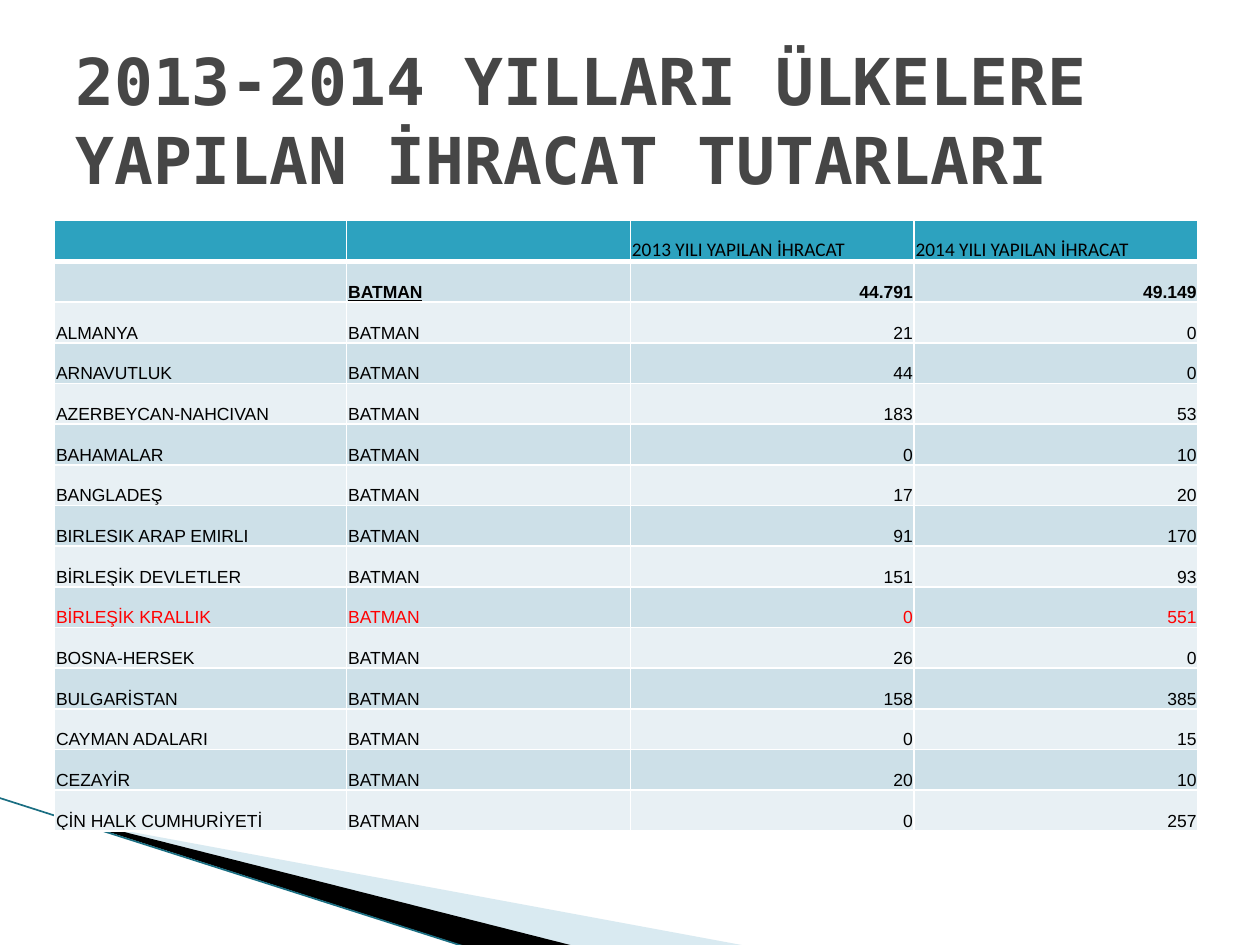
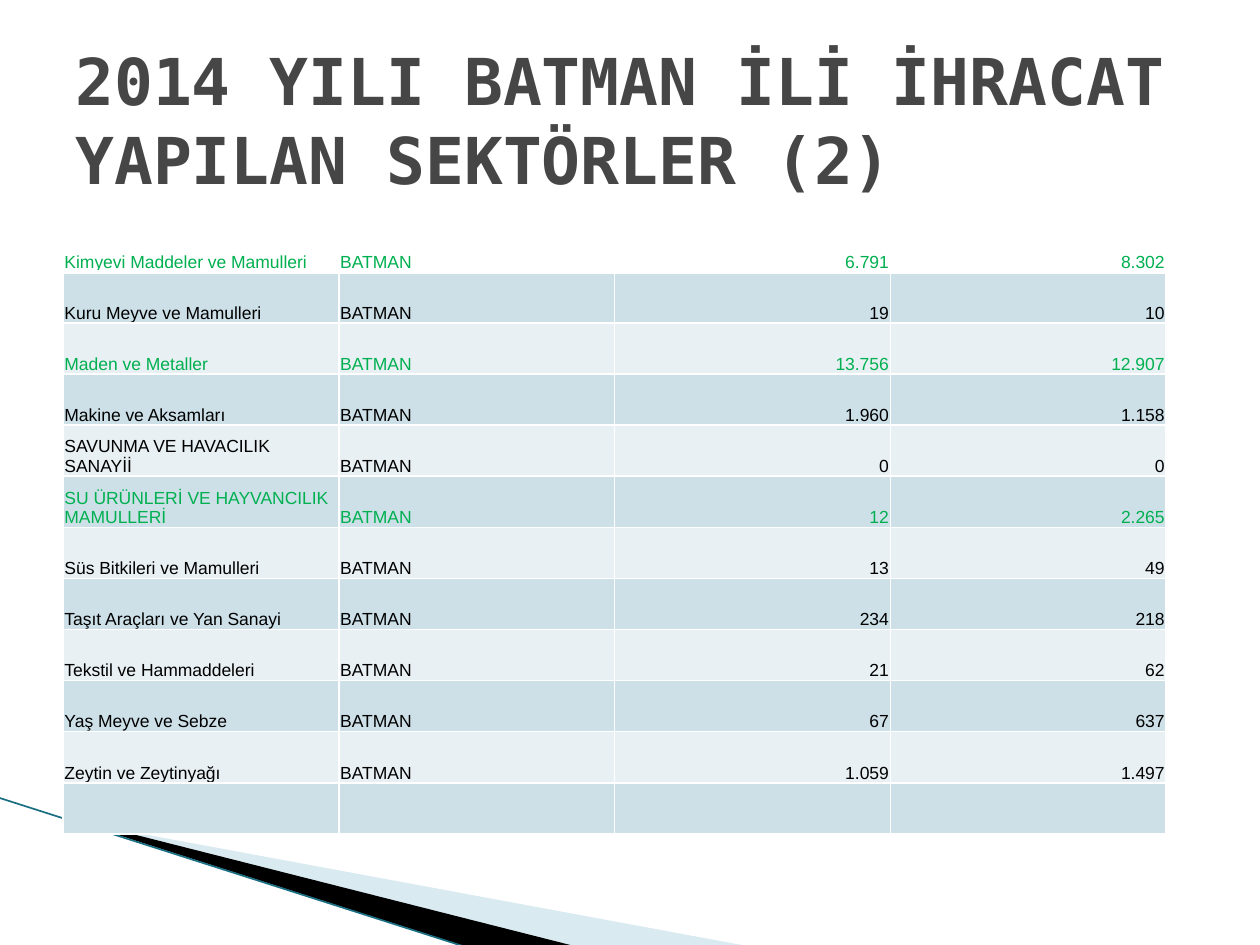
from dataclasses import dataclass

import pptx
import pptx.dml.color
import pptx.enum.shapes
import pptx.enum.text
import pptx.oxml
import pptx.oxml.ns
import pptx.util
from lxml import etree

Cm = pptx.util.Cm
Pt = pptx.util.Pt
RIGHT = pptx.enum.text.PP_ALIGN.RIGHT


@dataclass(frozen=True)
class Theme:
    title: str = "464646"
    text: str = "000000"
    red: str = "FF0000"
    green: str = "00B050"
    header: str = "2DA2BF"
    band_dark: str = "CDE0E8"
    band_light: str = "E8F0F4"
    border: str = "FFFFFF"
    wedge_pale: str = "A0CBDC"
    wedge_dark: str = "000000"
    edge: str = "1A6E82"
    title_font: str = "DejaVu Sans Mono"
    header_font: str = "Calibri"
    body_font: str = "Arial"
    title_size: float = 36.9
    title_pitch: float = 45
    header_size: float = 11
    body_size: float = 10


def rgb(code):
    return pptx.dml.color.RGBColor.from_string(code)


def write(tf, text, *, font, size, color, bold=False, underline=False, align=None, pitch=None):
    p = tf.paragraphs[0]
    p.alignment = align
    if pitch:
        p.line_spacing = Pt(pitch)
    r = p.add_run()
    r.text = text
    r.font.name, r.font.size = font, Pt(size)
    r.font.bold, r.font.underline = bold, underline
    r.font.color.rgb = rgb(color)


def add_borders(cell, color, bottom):
    """Line all four sides at 1 pt, except the bottom, whose width is given."""
    tc_pr = cell._tc.get_or_add_tcPr()
    for side, width in zip("LRTB", (1, 1, 1, bottom)):
        ln = etree.SubElement(tc_pr, pptx.oxml.ns.qn(f"a:ln{side}"), w=str(Pt(width)))
        fill = etree.SubElement(ln, pptx.oxml.ns.qn("a:solidFill"))
        etree.SubElement(fill, pptx.oxml.ns.qn("a:srgbClr"), val=color)


class Deck:
    def __init__(self, theme):
        self.theme = theme
        self.prs = pptx.Presentation()
        self.prs.slide_width, self.prs.slide_height = Cm(25.4), Cm(19.05)
        self.s = None

    def slide(self, title):
        """Start a slide with the corner wedges; return a function that adds the title on top."""
        self.s = self.prs.slides.add_slide(self.prs.slide_layouts[6])
        t = self.theme
        self.wedge([(1.4, 16.54), (15.11, 19.08), (11.58, 19.08), (1.4, 16.51)], t.wedge_pale, 40)
        self.wedge([(1.35, 16.48), (11.61, 19.08), (9.45, 19.1), (1.37, 16.51)], t.wedge_dark)
        self.line((-0.03, 16.08), (9.42, 19.1), t.edge, 0.95)
        self.title(title)

    def wedge(self, points, color, opacity=100):
        start, *rest = [(Cm(x), Cm(y)) for x, y in points]
        builder = self.s.shapes.build_freeform(*start)
        builder.add_line_segments(rest, close=True)
        sp = builder.convert_to_shape()
        sp.shadow.inherit = False
        sp.line.fill.background()
        sp.fill.solid()
        sp.fill.fore_color.rgb = rgb(color)
        if opacity < 100:
            clr = sp._element.spPr.find(".//" + pptx.oxml.ns.qn("a:srgbClr"))
            etree.SubElement(clr, pptx.oxml.ns.qn("a:alpha"), val=str(opacity * 1000))

    def line(self, start, end, color, width):
        straight = pptx.enum.shapes.MSO_CONNECTOR.STRAIGHT
        sp = self.s.shapes.add_connector(straight, *[Cm(v) for v in (*start, *end)])
        sp.line.color.rgb = rgb(color)
        sp.line.width = Pt(width)
        etree.SubElement(sp._element.spPr, pptx.oxml.ns.qn("a:effectLst"))

    def title(self, text):
        t = self.theme
        tf = self.s.shapes.add_textbox(Cm(1.27), Cm(0.8), Cm(22.86), Cm(3.18)).text_frame
        tf.word_wrap = True
        tf.vertical_anchor = pptx.enum.text.MSO_ANCHOR.MIDDLE
        write(tf, text, font=t.title_font, size=t.title_size, color=t.title, bold=True,
              pitch=t.title_pitch)

    def table(self, left, top, widths, row_height, rows, head_fill=None, formats=None):
        """Fill a banded table; formats maps (row, column) or a row to text settings."""
        t, formats = self.theme, formats or {}
        frame = self.s.shapes.add_table(len(rows), len(widths), Cm(left), Cm(top),
                                        Cm(sum(widths)), Cm(row_height * len(rows)))
        tbl = frame.table
        tbl.first_row = tbl.horz_banding = False
        for column, width in zip(tbl.columns, widths):
            column.width = Cm(width)
        for i, row in enumerate(rows):
            tbl.rows[i].height = Cm(row_height)
            fill = (t.band_dark if i % 2 else t.band_light) if i else head_fill
            for j, text in enumerate(row):
                style = dict(font=t.body_font, size=t.body_size, color=t.text,
                             align=RIGHT if j > 1 else None)
                style.update(formats.get(i, {}))
                style.update(formats.get((i, j), {}))
                self.cell(tbl.cell(i, j), text, fill, 1 if i else 3, style)

    def cell(self, cell, text, fill, bottom, style):
        add_borders(cell, self.theme.border, bottom)
        if fill:
            cell.fill.solid()
            cell.fill.fore_color.rgb = rgb(fill)
        else:
            cell.fill.background()
        cell.margin_left = cell.margin_right = cell.margin_top = Cm(0.03)
        cell.margin_bottom = 0
        cell.vertical_anchor = pptx.enum.text.MSO_ANCHOR.BOTTOM
        write(cell.text_frame, text, **style)


PROVINCE = "BATMAN"
COUNTRIES = [
    ("", "44.791", "49.149"),
    ("ALMANYA", "21", "0"),
    ("ARNAVUTLUK", "44", "0"),
    ("AZERBEYCAN-NAHCIVAN", "183", "53"),
    ("BAHAMALAR", "0", "10"),
    ("BANGLADEŞ", "17", "20"),
    ("BIRLESIK ARAP EMIRLI", "91", "170"),
    ("BİRLEŞİK DEVLETLER", "151", "93"),
    ("BİRLEŞİK KRALLIK", "0", "551"),
    ("BOSNA-HERSEK", "26", "0"),
    ("BULGARİSTAN", "158", "385"),
    ("CAYMAN ADALARI", "0", "15"),
    ("CEZAYİR", "20", "10"),
    ("ÇİN HALK CUMHURİYETİ", "0", "257"),
]
SECTORS = [
    ("Kimyevi Maddeler ve Mamulleri", "6.791", "8.302"),
    ("Kuru Meyve ve Mamulleri", "19", "10"),
    ("Maden ve Metaller", "13.756", "12.907"),
    ("Makine ve Aksamları", "1.960", "1.158"),
    ("SAVUNMA VE HAVACILIK SANAYİİ", "0", "0"),
    ("SU ÜRÜNLERİ VE HAYVANCILIK MAMULLERİ", "12", "2.265"),
    ("Süs Bitkileri ve Mamulleri", "13", "49"),
    ("Taşıt Araçları ve Yan Sanayi", "234", "218"),
    ("Tekstil ve Hammaddeleri", "21", "62"),
    ("Yaş Meyve ve Sebze", "67", "637"),
    ("Zeytin ve Zeytinyağı", "1.059", "1.497"),
]


def with_province(records):
    return [(name, PROVINCE, *values) for name, *values in records]


def countries_slide(deck):
    t = deck.theme
    deck.slide("2013-2014 YILLARI ÜLKELERE YAPILAN İHRACAT TUTARLARI")
    header = ("", "", "2013 YILI YAPILAN İHRACAT", "2014 YILI YAPILAN İHRACAT")
    formats = {
        0: dict(font=t.header_font, size=t.header_size, align=None),
        1: dict(bold=True),
        (1, 1): dict(underline=True),
        8 + 1: dict(color=t.red),
    }
    deck.table(1.1, 4.45, [5.89] + [5.72] * 3, 0.82, [header] + with_province(COUNTRIES),
               head_fill=t.header, formats=formats)


def sectors_slide(deck):
    deck.slide("2014 YILI BATMAN İLİ İHRACAT YAPILAN SEKTÖRLER (2)")
    formats = {row: dict(color=deck.theme.green) for row in (0, 2, 5)}
    deck.table(1.27, 4.45, [5.56] * 4, 1.03, with_province(SECTORS) + [("",) * 4],
               formats=formats)


def main():
    deck = Deck(Theme())
    countries_slide(deck)
    sectors_slide(deck)
    deck.prs.save("out.pptx")


if __name__ == "__main__":
    main()
